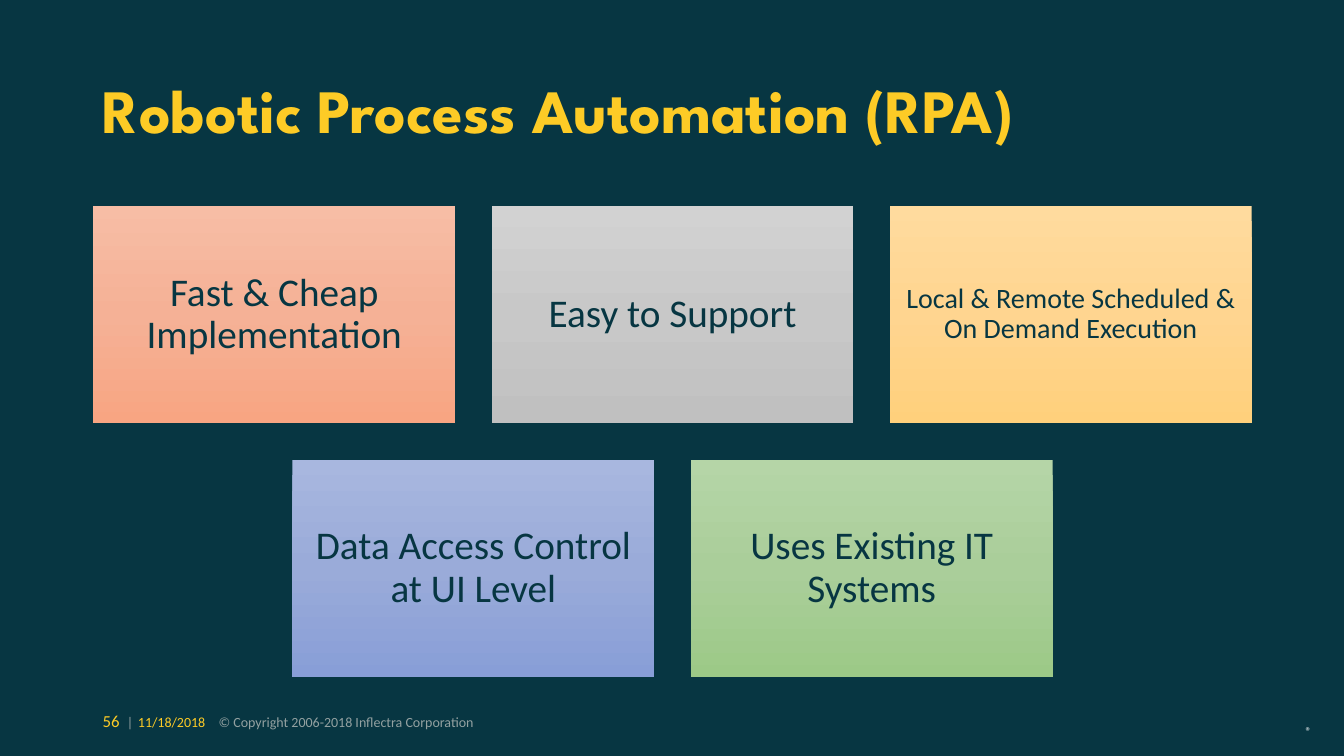
from copy import deepcopy

from lxml import etree
from pptx import Presentation
from pptx.dml.color import RGBColor
from pptx.enum.shapes import MSO_SHAPE
from pptx.enum.text import MSO_ANCHOR, MSO_AUTO_SIZE, PP_ALIGN
from pptx.oxml.ns import qn
from pptx.util import Inches, Pt

RECTANGLE = MSO_SHAPE.RECTANGLE
MIDDLE = MSO_ANCHOR.MIDDLE
NO_AUTOFIT = MSO_AUTO_SIZE.NONE
LEFT, CENTER = PP_ALIGN.LEFT, PP_ALIGN.CENTER

NAVY = RGBColor(0x07, 0x36, 0x42)
YELLOW = RGBColor(0xFD, 0xCB, 0x26)
GREY = RGBColor(0x93, 0xA1, 0xA1)
WHITE = RGBColor(0xFF, 0xFF, 0xFF)
BODY_FONT, TITLE_FONT = "Calibri", "League Spartan"

SLIDE_WIDTH, SLIDE_HEIGHT = 13.33, 7.5
MARGIN = 0.92
CONTENT_WIDTH = 11.5
CARD_WIDTH, CARD_HEIGHT, GAP = 3.59, 2.16, 0.36
CARDS_TOP = 2.04
FOOTER_TABS = (0.24, 0.35, 1.15)

# Each card: text, font size, inset, gradient colours from top to bottom
CARD_ROWS = [
    [
        ("Fast & Cheap Implementation", 28, 0.12, ("F7BDA5", "F5B196", "F8A582")),
        ("Easy to Support", 28, 0.12, ("D2D2D2", "C8C8C8", "C0C0C0")),
        ("Local & Remote Scheduled & On Demand Execution", 20, 0.08,
         ("FFDB9E", "FFD590", "FFD07C")),
    ],
    [
        ("Data Access Control at UI Level", 28, 0.12, ("A8B7DF", "9AABD9", "889ED7")),
        ("Uses Existing IT Systems", 28, 0.12, ("B5D5A7", "AACE9A", "9CC987")),
    ],
]


def add_run(paragraph, text, size, color, font=BODY_FONT, bold=False):
    run = paragraph.add_run()
    run.text = text
    run.font.size = Pt(size)
    run.font.name = font
    run.font.bold = bold
    run.font.color.rgb = color
    return run


def set_insets(frame, inset):
    frame.margin_left = frame.margin_right = Inches(inset)
    frame.margin_top = frame.margin_bottom = Inches(inset)


def fill_gradient(shape, colors):
    """Fill from top to bottom with three evenly spaced colours."""
    fill = shape.fill
    fill.gradient()
    fill.gradient_angle = 270
    stop_list = shape._element.spPr.find(".//" + qn("a:gsLst"))
    stop_list.insert(1, deepcopy(stop_list[0]))
    for index, (stop, color) in enumerate(zip(fill.gradient_stops, colors)):
        stop.position = index / 2
        stop.color.rgb = RGBColor.from_string(color)


def add_title(slide, text):
    title = slide.shapes.title
    title.left, title.top = Inches(MARGIN), Inches(0.4)
    title.width, title.height = Inches(CONTENT_WIDTH), Inches(1.45)
    frame = title.text_frame
    frame.auto_size = NO_AUTOFIT
    frame.vertical_anchor = MIDDLE
    paragraph = frame.paragraphs[0]
    paragraph.alignment = LEFT
    paragraph.line_spacing = 0.9
    add_run(paragraph, text, 44, YELLOW, TITLE_FONT, bold=True)


def add_card(slide, left, top, text, size, inset, colors):
    card = slide.shapes.add_shape(
        RECTANGLE, Inches(left), Inches(top), Inches(CARD_WIDTH), Inches(CARD_HEIGHT))
    card.shadow.inherit = False
    card.line.fill.background()
    fill_gradient(card, colors)
    frame = card.text_frame
    frame.word_wrap = True
    frame.vertical_anchor = MIDDLE
    set_insets(frame, inset)
    paragraph = frame.paragraphs[0]
    paragraph.alignment = CENTER
    paragraph.line_spacing = 0.9
    add_run(paragraph, text, size, NAVY)


def add_card_rows(slide):
    """Stack the rows of cards, each centred on the content width."""
    for row, cards in enumerate(CARD_ROWS):
        row_width = len(cards) * (CARD_WIDTH + GAP) - GAP
        row_left = MARGIN + (CONTENT_WIDTH - row_width) / 2
        top = CARDS_TOP + row * (CARD_HEIGHT + GAP)
        for column, card in enumerate(cards):
            add_card(slide, row_left + column * (CARD_WIDTH + GAP), top, *card)


def add_text_box(slide, left, top, width, height):
    box = slide.shapes.add_textbox(
        Inches(left), Inches(top), Inches(width), Inches(height))
    return box.text_frame


def add_tab_stops(paragraph, positions):
    properties = paragraph._p.get_or_add_pPr()
    tab_list = etree.SubElement(properties, qn("a:tabLst"))
    for position in positions:
        etree.SubElement(tab_list, qn("a:tab"), pos=str(Inches(position)), algn="l")


def add_footer(slide):
    frame = add_text_box(slide, MARGIN, 7, 7.47, 0.3)
    frame.word_wrap = True
    paragraph = frame.paragraphs[0]
    add_tab_stops(paragraph, FOOTER_TABS)
    add_run(paragraph, "56", 12, YELLOW)
    add_run(paragraph, "\t|\t", 10, GREY)
    add_run(paragraph, "11/18/2018", 10, YELLOW)
    add_run(paragraph, "\t© Copyright 2006-2018 Inflectra Corporation", 10, GREY)


def add_registered_mark(slide):
    frame = add_text_box(slide, 12.95, 7.16, 0.18, 0.24)
    set_insets(frame, 0)
    run = add_run(frame.paragraphs[0], "®", 14, WHITE)
    run.font._element.set("baseline", "30000")


def main():
    presentation = Presentation()
    presentation.slide_width = Inches(SLIDE_WIDTH)
    presentation.slide_height = Inches(SLIDE_HEIGHT)
    slide = presentation.slides.add_slide(presentation.slide_layouts[5])
    slide.background.fill.solid()
    slide.background.fill.fore_color.rgb = NAVY
    add_registered_mark(slide)
    add_footer(slide)
    add_title(slide, "Robotic Process Automation (RPA)")
    add_card_rows(slide)
    presentation.save("out.pptx")


if __name__ == "__main__":
    main()
